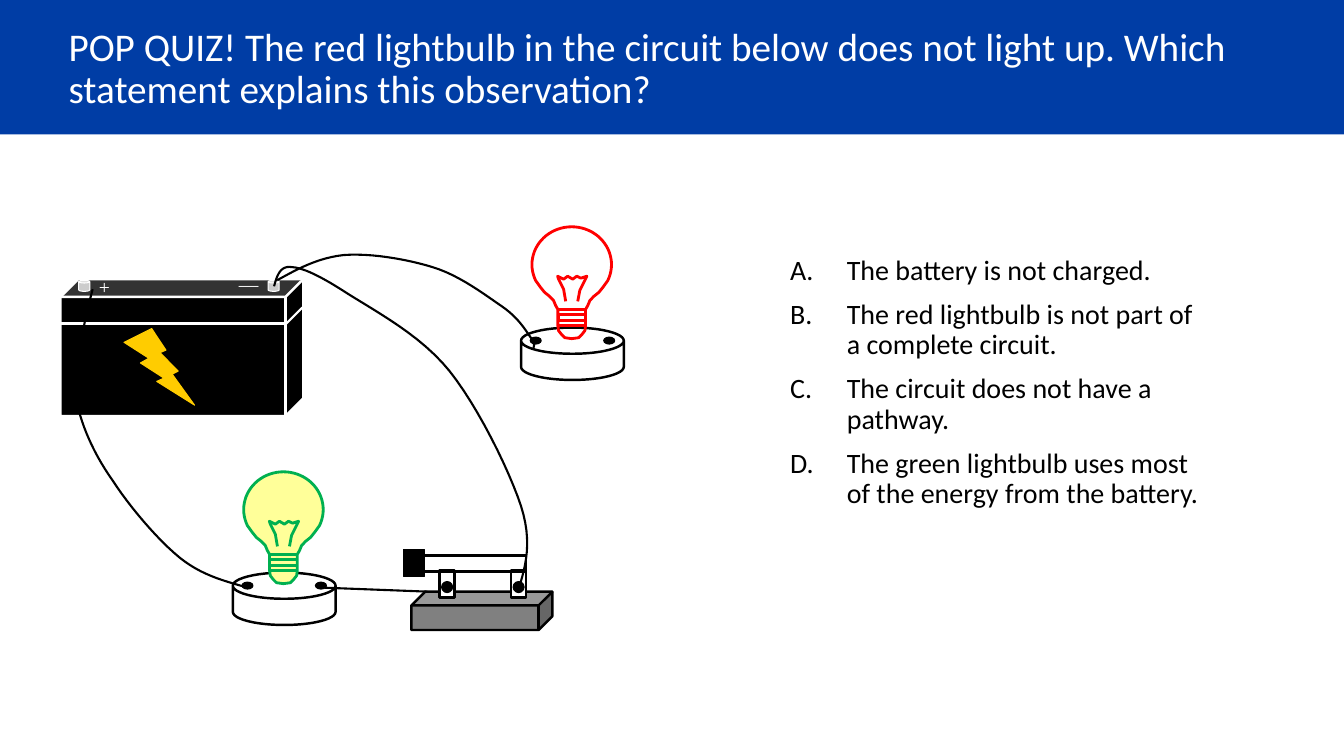
import math

from lxml import etree
from pptx import Presentation
from pptx.dml.color import RGBColor
from pptx.enum.shapes import MSO_CONNECTOR, MSO_SHAPE
from pptx.enum.text import MSO_ANCHOR, MSO_AUTO_SIZE, PP_ALIGN
from pptx.oxml.ns import qn
from pptx.util import Pt

RECT, OVAL = MSO_SHAPE.RECTANGLE, MSO_SHAPE.OVAL
CUBE, CAN, BOLT = MSO_SHAPE.CUBE, MSO_SHAPE.CAN, MSO_SHAPE.LIGHTNING_BOLT
STRAIGHT = MSO_CONNECTOR.STRAIGHT
LEFT = PP_ALIGN.LEFT
TOP, MIDDLE = MSO_ANCHOR.TOP, MSO_ANCHOR.MIDDLE
NO_FIT = MSO_AUTO_SIZE.NONE

BLACK, WHITE, BLUE, RED, GREEN = "000000", "FFFFFF", "003DA5", "FF0000", "00B050"
GOLD, PALE_YELLOW, SILVER, GRAY = "FFCC00", "FFFF99", "CCCCCC", "808080"
BODY_FONT, SIGN_FONT = "Calibri", "Times New Roman"

QUESTION = ("POP QUIZ! The red lightbulb in the circuit below does not light up. "
            "Which statement explains this observation?")
ANSWERS = [
    "The battery is not charged.",
    "The red lightbulb is not part of a complete circuit.",
    "The circuit does not have a pathway.",
    "The green lightbulb uses most of the energy from the battery.",
]

BATTERY_TO_RED = [
    (198, 200.2),
    (212.4, 192.2), (226.8, 184.3), (245.5, 182.2),
    (264.2, 180.7), (290.2, 185), (308.9, 190.8),
    (328.3, 196.6), (347, 211), (358.6, 218.9),
    (370.1, 226.8), (375.1, 235.4), (378.7, 240.5),
    (382.3, 245.5), (381.6, 247), (380.9, 249.1),
]
BATTERY_TO_SWITCH = [
    (195.8, 204.5),
    (198, 196.6), (200.2, 189.4), (208.8, 190.8),
    (217.4, 191.5), (230.4, 198), (249.1, 210.2),
    (268.6, 222.5), (301, 239.8), (321.1, 265),
    (341.3, 290.2), (363.6, 335.5), (372.2, 361.4),
    (380.2, 386.6), (375.8, 403.2), (370.8, 419.8),
]
BATTERY_TO_GREEN = [
    (66.2, 206.6),
    (62.6, 220.3), (59, 234.7), (57.6, 249.1),
    (56.2, 263.5), (52.6, 277.2), (56.2, 293),
    (60.5, 308.9), (68.4, 326.2), (80.6, 343.4),
    (92.2, 361.4), (112.3, 385.2), (128.2, 398.2),
    (143.3, 410.4), (159.1, 414.7), (174.2, 419),
]
NECK = [(22.3, 43.2), (19.4, 46.8), (15.8, 49.7), (13, 52.6), (11.5, 56.2),
        (9.9, 59), (9.9, 70.6), (9.4, 74.2), (7.2, 77), (5, 79.2), (0, 79.9)]
FILAMENT = [(-4.3, 53.3), (-5.8, 44.6), (-9.4, 37.4), (-10.1, 35.3), (-5.8, 37.4),
            (-2.9, 35.3), (0.7, 37.4), (3.6, 35.3), (6.5, 36.7), (10.8, 35.3),
            (5.8, 45.4), (4.3, 53.3)]
THREAD = [(-9.7, 59), (9.7, 59), (9.7, 62.6), (-9.7, 62.6),
          (-9.7, 67), (9.7, 67), (9.7, 70.6), (-9.7, 70.6)]


def color(hex_string):
    return RGBColor.from_string(hex_string)


def bezier_points(nodes, steps=12):
    points = [nodes[0]]
    for i in range(0, len(nodes) - 1, 3):
        for step in range(1, steps + 1):
            t = step / steps
            weights = ((1 - t) ** 3, 3 * t * (1 - t) ** 2, 3 * t * t * (1 - t), t ** 3)
            points.append(tuple(sum(w * node[axis] for w, node in zip(weights, nodes[i:i + 4]))
                                for axis in (0, 1)))
    return points


def glass_outline():
    arc = [(28.4 * math.cos(math.radians(a)), 27 + 27 * math.sin(math.radians(a)))
           for a in range(-90, 30, 5)]
    right = arc + NECK
    return right + [(-x, y) for x, y in reversed(right[1:-1])]


class CircuitSlide:
    def __init__(self, deck):
        self.slide = deck.slides.add_slide(deck.slide_layouts[5])
        self.shapes = self.slide.shapes

    def paint(self, shape, fill, line, weight):
        shape.shadow.inherit = False
        for part, hex_string in ((shape.fill, fill), (shape.line.fill, line)):
            if hex_string:
                part.solid()
                part.fore_color.rgb = color(hex_string)
            else:
                part.background()
        if line:
            shape.line.width = Pt(weight)

    def shape(self, kind, box, fill=None, line=None, weight=0.75, adjust=None):
        shape = self.shapes.add_shape(kind, *map(Pt, box))
        self.paint(shape, fill, line, weight)
        if adjust is not None:
            shape.adjustments[0] = adjust
        return shape

    def outline(self, contours, line, weight, fill=None, closed=False):
        contours = [[(Pt(x), Pt(y)) for x, y in contour] for contour in contours]
        builder = self.shapes.build_freeform(*contours[0][0])
        for i, contour in enumerate(contours):
            if i:
                builder.move_to(*contour[0])
            builder.add_line_segments(contour[1:], close=closed)
        self.paint(builder.convert_to_shape(), fill, line, weight)

    def wire(self, nodes):
        self.outline([bezier_points(nodes)], BLACK, 1.5)

    def line(self, start, end, hex_string):
        connector = self.shapes.add_connector(STRAIGHT, *map(Pt, start + end))
        connector.line.color.rgb = color(hex_string)
        connector.line.width = Pt(1.5)
        etree.SubElement(connector._element.spPr, qn("a:effectLst"))

    def style(self, paragraph, size, font, hex_string):
        paragraph.alignment = LEFT
        paragraph.font.size = Pt(size)
        paragraph.font.name = font
        paragraph.font.color.rgb = color(hex_string)

    def title(self, text, box):
        title = self.shapes.title
        title.left, title.top, title.width, title.height = map(Pt, box)
        frame = title.text_frame
        frame.text = text
        frame.word_wrap, frame.auto_size, frame.vertical_anchor = True, NO_FIT, MIDDLE
        frame.paragraphs[0].line_spacing = 0.9
        self.style(frame.paragraphs[0], 28, BODY_FONT, WHITE)
        band = self.shape(RECT, (0, 0, 960, 96), BLUE)
        title._element.addprevious(band._element)

    def text_frame(self, box, inset_x, inset_y):
        frame = self.shapes.add_textbox(*map(Pt, box)).text_frame
        frame.word_wrap, frame.vertical_anchor = True, TOP
        frame.margin_left = frame.margin_right = Pt(inset_x)
        frame.margin_top = frame.margin_bottom = Pt(inset_y)
        return frame

    def sign(self, text, box):
        frame = self.text_frame(box, 2.9, 2.9)
        frame.text = text
        self.style(frame.paragraphs[0], 14, SIGN_FONT, WHITE)

    def lettered_list(self, items, box):
        frame = self.text_frame(box, 7.2, 3.6)
        frame.text = "\n".join(items)
        for i, paragraph in enumerate(frame.paragraphs):
            properties = paragraph._p.get_or_add_pPr()
            properties.set("marL", str(Pt(40.5)))
            properties.set("indent", str(-Pt(40.5)))
            etree.SubElement(properties, qn("a:buFont"), typeface="+mj-lt")
            etree.SubElement(properties, qn("a:buAutoNum"), type="alphaUcPeriod")
            paragraph.line_spacing = 0.9
            paragraph.space_before = Pt(10 if i else 0)
            self.style(paragraph, 20, BODY_FONT, BLACK)

    def battery(self):
        self.shape(CUBE, (43.2, 199.4, 173.5, 97.9), BLACK, WHITE, 1.75, 0.13)
        self.line((43.2, 231.1), (204.5, 231.1), WHITE)
        self.line((204.5, 231.1), (216, 219.6), WHITE)
        self.sign("+", (67.7, 193.7, 25.9, 31))
        self.sign("—", (167.8, 191.5, 19.4, 17.3))
        self.shape(BOLT, (88.6, 234.7, 50.4, 54.7), GOLD, GOLD)
        for post_x in (56.2, 191.5):
            self.shape(CAN, (post_x, 200.2, 7.9, 7.9), SILVER, WHITE, adjust=0.25)

    def lamp(self, x, y, line, glass=None):
        self.shape(CAN, (x, y, 73.4, 37.4), None, BLACK, 1.75, 0.5)
        bulb, filament, thread = ([(x + 36.2 + dx, y - 72 + dy) for dx, dy in part]
                                  for part in (glass_outline(), FILAMENT, THREAD))
        self.outline([bulb], line, 2, glass, closed=True)
        self.outline([filament, thread], line, 2)
        for dx in (6.5, 59):
            self.shape(OVAL, (x + dx, y + 6.8, 7.9, 5), BLACK, BLACK)

    def switch(self):
        self.shape(CUBE, (293.8, 422.6, 100.8, 27.4), GRAY, BLACK, 1.75, 0.361)
        clips = (313.9, 365)
        for clip_x in clips:
            self.shape(RECT, (clip_x, 407.5, 10.8, 19.4), WHITE, BLACK, 1.75)
        self.shape(RECT, (302.4, 396.7, 73.4, 11.5), None, BLACK, 1.75)
        self.shape(RECT, (288, 392.4, 15.1, 19.4), BLACK, BLACK)
        for clip_x in clips:
            self.shape(OVAL, (clip_x + 1.5, 415.4, 7.9, 7.9), BLACK, BLACK)


def main():
    deck = Presentation()
    deck.slide_width, deck.slide_height = Pt(960), Pt(540)
    quiz = CircuitSlide(deck)
    quiz.title(QUESTION, (41.8, 22.3, 853.9, 54.7))
    quiz.battery()
    quiz.wire(BATTERY_TO_RED)
    quiz.lamp(372.2, 234, RED)
    quiz.switch()
    quiz.wire(BATTERY_TO_SWITCH)
    quiz.lamp(166.3, 409, GREEN, PALE_YELLOW)
    quiz.line((231.8, 419.8), (305.3, 422.6), BLACK)
    quiz.wire(BATTERY_TO_GREEN)
    quiz.lettered_list(ANSWERS, (557.3, 179.3, 311.8, 267.1))
    deck.save("out.pptx")


if __name__ == "__main__":
    main()
